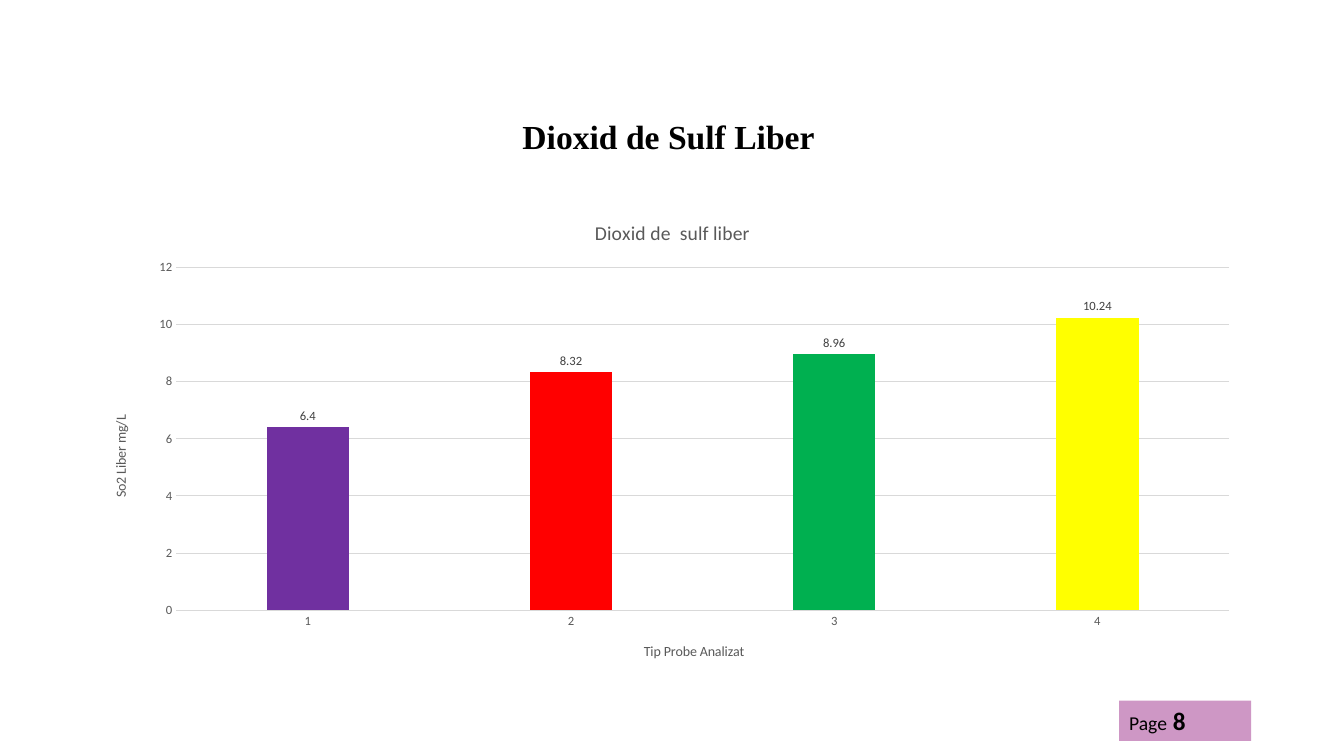
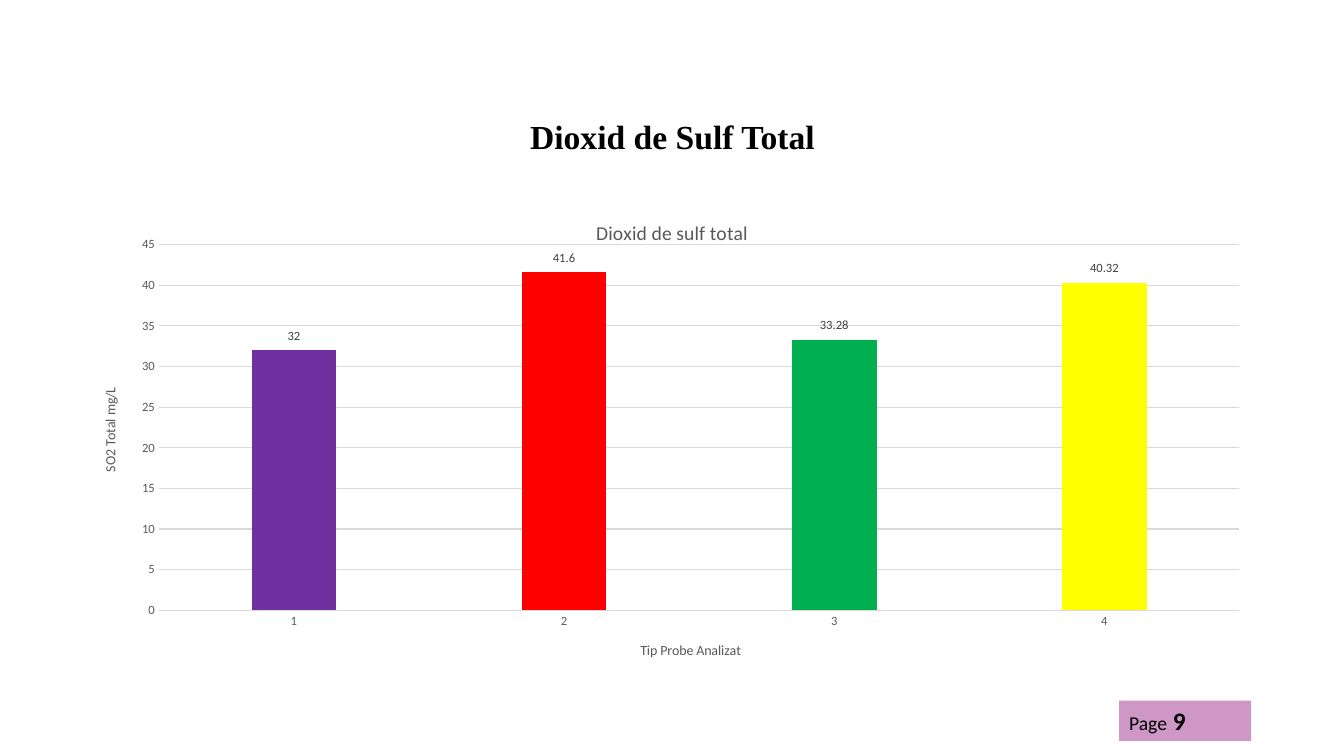
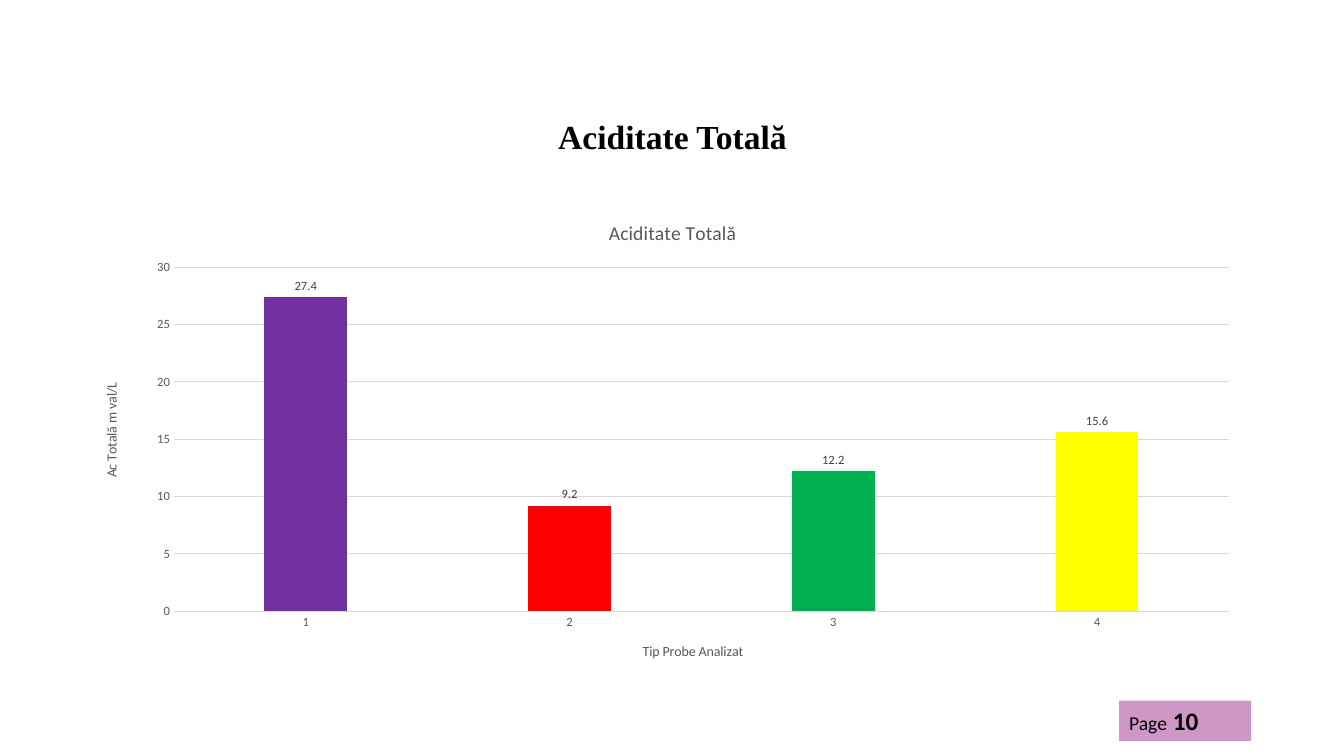
from dataclasses import dataclass

from lxml.etree import SubElement
from pptx import Presentation
from pptx.chart.data import CategoryChartData
from pptx.dml.color import RGBColor
from pptx.enum.chart import XL_CHART_TYPE, XL_LABEL_POSITION, XL_TICK_MARK
from pptx.enum.shapes import MSO_SHAPE
from pptx.enum.text import MSO_ANCHOR, PP_ALIGN
from pptx.oxml import parse_xml
from pptx.oxml.ns import nsdecls, qn
from pptx.util import Inches, Pt

NO_LEADER_LINES = (
    f'<c:extLst {nsdecls("c")}><c:ext uri="{{CE6537A1-D6FC-4f65-9D91-7224C49458BB}}" '
    'xmlns:c15="http://schemas.microsoft.com/office/drawing/2012/chart">'
    '<c15:showLeaderLines val="0"/></c:ext></c:extLst>'
)


@dataclass(frozen=True)
class Theme:
    text: str = "000000"
    muted: str = "595959"
    label: str = "404040"
    grid: str = "D9D9D9"
    page: str = "9F318D"
    series: str = "4472C4"
    samples: tuple = ("7030A0", "FF0000", "00B050", "FFFF00")
    title_font: str = "Times New Roman"
    body_font: str = "Calibri"
    title_size: int = 24
    page_size: int = 14
    number_size: int = 18
    chart_title_size: int = 14
    axis_title_size: int = 10
    tick_size: int = 9


def set_layout(parent, index, percents, edge=True):
    for old in parent.findall(qn("c:layout")):
        parent.remove(old)
    tags = ['<c:layoutTarget val="inner"/>'] if len(percents) == 4 else []
    if edge:
        tags += ['<c:xMode val="edge"/>', '<c:yMode val="edge"/>']
    tags += [f'<c:{key} val="{value / 100:.4f}"/>' for key, value in zip("xywh", percents)]
    parent.insert(index, parse_xml(
        f'<c:layout {nsdecls("c")}><c:manualLayout>{"".join(tags)}</c:manualLayout></c:layout>'
    ))


class Deck:
    def __init__(self, theme):
        self.theme = theme
        self.prs = Presentation()
        self.prs.slide_width = Inches(13.33)
        self.prs.slide_height = Inches(7.5)
        self.slide = None

    def add_slide(self):
        self.slide = self.prs.slides.add_slide(self.prs.slide_layouts[6])

    def style(self, font, size, color, name=None, bold=False):
        font.size = Pt(size)
        font.name = name or self.theme.body_font
        font.bold = bold
        font.color.rgb = RGBColor.from_string(color)

    def title(self, text):
        t = self.theme
        box = self.slide.shapes.add_textbox(Inches(0.92), Inches(0.91), Inches(11.5), Inches(0.94))
        tf = box.text_frame
        tf.word_wrap = True
        tf.vertical_anchor = MSO_ANCHOR.MIDDLE
        p = tf.paragraphs[0]
        p.text = text
        p.alignment = PP_ALIGN.CENTER
        p.line_spacing = 0.9
        self.style(p.runs[0].font, t.title_size, t.text, t.title_font, True)

    def page_tag(self, number):
        t = self.theme
        sp = self.slide.shapes.add_shape(
            MSO_SHAPE.RECTANGLE, Inches(11.1), Inches(6.95), Inches(1.31), Inches(0.4)
        )
        sp.shadow.inherit = False
        sp.line.fill.background()
        sp.fill.solid()
        sp.fill.fore_color.rgb = RGBColor.from_string(t.page)
        color = sp.element.spPr.find(qn("a:solidFill"))[0]
        SubElement(color, qn("a:alpha")).set("val", "50000")
        tf = sp.text_frame
        tf.vertical_anchor = MSO_ANCHOR.TOP
        p = tf.paragraphs[0]
        p.alignment = PP_ALIGN.LEFT
        for text, size, bold in (("Page", t.page_size, False), (f" {number}", t.number_size, True)):
            r = p.add_run()
            r.text = text
            self.style(r.font, size, t.text, bold=bold)

    def chart_text(self, title, text, size, position):
        title.text_frame.text = text
        self.style(title.text_frame.paragraphs[0].runs[0].font, size, self.theme.muted)
        set_layout(title.element, 1, position)

    def axis(self, axis, text, position):
        t = self.theme
        self.chart_text(axis.axis_title, text, t.axis_title_size, position)
        axis.major_tick_mark = XL_TICK_MARK.NONE
        axis.minor_tick_mark = XL_TICK_MARK.NONE
        self.style(axis.tick_labels.font, t.tick_size, t.muted)

    def grid_line(self, line):
        line.color.rgb = RGBColor.from_string(self.theme.grid)
        line.width = Pt(0.75)

    def raise_labels(self, chart, values, top, plot_height):
        t = self.theme
        for i in range(len(values)):
            label = chart.plots[0].series[0].points[i].data_label
            self.style(label.font, t.tick_size, t.label)
            label.position = XL_LABEL_POSITION.CENTER
        for dLbl, value in zip(chart.element.xpath(".//c:dLbl"), values):
            set_layout(dLbl, 1, (0, -(plot_height * value / top / 2 + 3)), edge=False)
        for dLbls in chart.element.xpath(".//c:ser/c:dLbls"):
            for leader in dLbls.findall(qn("c:showLeaderLines")):
                leader.set("val", "0")
            dLbls.append(parse_xml(NO_LEADER_LINES))

    def column_chart(self, title, title_at, value_title, value_at, category_at, plot_area,
                     values, stacked_top=None):
        t = self.theme
        data = CategoryChartData()
        data.categories = [str(i + 1) for i in range(len(values))]
        data.add_series("Series 1", values)
        kind = XL_CHART_TYPE.COLUMN_STACKED if stacked_top else XL_CHART_TYPE.COLUMN_CLUSTERED
        chart = self.slide.shapes.add_chart(
            kind, Inches(0.92), Inches(2), Inches(11.5), Inches(4.76), data
        ).chart
        self.style(chart.font, t.axis_title_size, t.text)
        chart.has_legend = False
        self.chart_text(chart.chart_title, title, t.chart_title_size, title_at)
        self.axis(chart.category_axis, "Tip Probe Analizat", category_at)
        self.axis(chart.value_axis, value_title, value_at)
        self.grid_line(chart.category_axis.format.line)
        self.grid_line(chart.value_axis.major_gridlines.format.line)
        chart.value_axis.format.line.fill.background()
        set_layout(chart.element.xpath(".//c:plotArea")[0], 0, plot_area)

        plot = chart.plots[0]
        plot.vary_by_categories = False
        plot.gap_width = 219
        plot.overlap = 100 if stacked_top else -27
        series = plot.series[0]
        series.format.fill.solid()
        series.format.fill.fore_color.rgb = RGBColor.from_string(t.series)
        for i, color in enumerate(t.samples):
            fill = series.points[i].format.fill
            fill.solid()
            fill.fore_color.rgb = RGBColor.from_string(color)
        labels = series.data_labels
        labels.show_value = True
        self.style(labels.font, t.tick_size, t.label)
        if stacked_top:
            labels.position = XL_LABEL_POSITION.CENTER
            self.raise_labels(chart, values, stacked_top, plot_area[3])
        else:
            labels.position = XL_LABEL_POSITION.OUTSIDE_END


def main():
    deck = Deck(Theme())
    slides = [
        ("Dioxid de Sulf Liber ", dict(
            title="Dioxid de  sulf liber", title_at=(43, 2.9),
            value_title="So2 Liber mg/L", value_at=(1.4, 44), category_at=(47.3, 91.3),
            plot_area=(7.2, 13.7, 90.8, 71.5), values=(6.4, 8.32, 8.96, 10.24))),
        ("Dioxid de Sulf Total", dict(
            title="Dioxid de sulf total", title_at=(43.1, 2.9),
            value_title="SO2 Total mg/L", value_at=(0.5, 38.2), category_at=(47, 91.2),
            plot_area=(5.7, 9, 93.2, 76.2), values=(32, 41.6, 33.28, 40.32),
            stacked_top=45)),
        ("Aciditate Totală", dict(
            title="Aciditate Totală", title_at=(44.2, 2.9),
            value_title="Ac Totală m val/L", value_at=(0.6, 37.2), category_at=(47.2, 91.3),
            plot_area=(7, 13.7, 91, 71.7), values=(27.4, 9.2, 12.2, 15.6))),
    ]
    for number, (title, chart) in enumerate(slides, start=8):
        deck.add_slide()
        deck.title(title)
        deck.page_tag(number)
        deck.column_chart(**chart)
    deck.prs.save("out.pptx")


if __name__ == "__main__":
    main()
